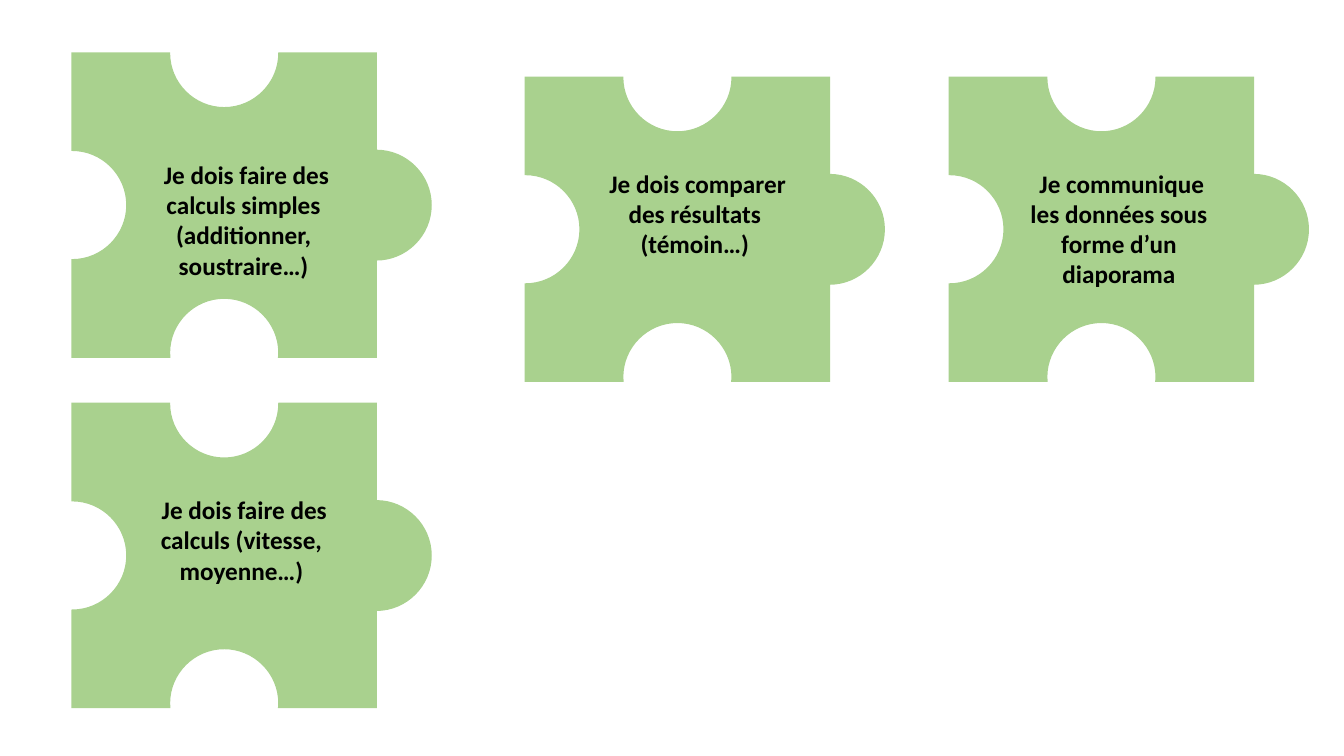
from math import cos, radians, sin

from lxml import etree
from pptx import Presentation
from pptx.dml.color import RGBColor
from pptx.enum.text import MSO_AUTO_SIZE, PP_ALIGN
from pptx.oxml.ns import qn
from pptx.util import Pt

CENTER = PP_ALIGN.CENTER
GROW = MSO_AUTO_SIZE.SHAPE_TO_FIT_TEXT
GREEN = RGBColor(0xA9, 0xD1, 0x8E)
BLACK = RGBColor(0, 0, 0)

PIECES = [
    {"at": (51.6, 37.9), "label": (97.3, 110.2, 94.5),
     "text": " Je dois faire des calculs simples (additionner, soustraire…)"},
    {"at": (375.3, 55.2), "label": (419.6, 116.6, 72.7),
     "text": " Je dois comparer des résultats (témoin…)"},
    {"at": (678.2, 55.2), "label": (722.6, 116.4, 94.5),
     "text": " Je communique les données sous forme d’un diaporama"},
    {"at": (51.6, 288.2), "label": (95.8, 349.6, 72.7),
     "text": " Je dois faire des calculs (vitesse, moyenne…)"},
]

SIDE = 217.2
MID = SIDE / 2
RADIUS = 39.1
BOTTOM_NOTCH = 214.2
LABEL_WIDTH = 153.4
BEZIER = 0.55


def half_circle(cx, cy, start, turn):
    def around(angle, pull=0):
        c, d = cos(radians(angle)), sin(radians(angle))
        return cx + RADIUS * (c - pull * d), cy + RADIUS * (d + pull * c)

    pull = BEZIER * turn / 90
    segments = [around(start)]
    for a in (start, start + turn):
        b = a + turn
        segments.append((*around(a, pull), *around(b, -pull), *around(b)))
    return segments


INNER_HALF = [(SIDE, MID - RADIUS), *half_circle(SIDE, MID, 90, 90)]
KNOB = half_circle(SIDE, MID, -90, 90)
BODY = [
    (0, 0), *half_circle(MID, 0, 180, -90),
    (SIDE, 0), *half_circle(SIDE, MID, 270, -90),
    (SIDE, SIDE), (MID + RADIUS - 0.2, SIDE),
    *half_circle(MID, BOTTOM_NOTCH, 0, -90),
    (MID - RADIUS + 0.2, SIDE), (0, SIDE), *half_circle(0, MID, 90, -90),
]


def add_outline(group, left, top, outline):
    segments = [[Pt((left, top)[i % 2] + v) for i, v in enumerate(segment)]
                for segment in outline]
    ends = [segment[-2:] for segment in segments]
    builder = group.shapes.build_freeform(*ends[0])
    builder.add_line_segments(ends[1:], close=True)
    sp = builder.convert_to_shape()
    lines = list(sp._element.iter(qn("a:lnTo")))
    for line, segment in zip(lines, segments[1:]):
        if len(segment) == 6:
            curve = etree.Element(qn("a:cubicBezTo"))
            for x, y in zip(segment[::2], segment[1::2]):
                etree.SubElement(curve, qn("a:pt"),
                                 x=str(x - sp.left), y=str(y - sp.top))
            line.getparent().replace(line, curve)
    sp.shadow.inherit = False
    sp.fill.solid()
    sp.fill.fore_color.rgb = GREEN
    sp.line.color.rgb = GREEN
    sp.line.width = Pt(1)
    ln = sp._element.spPr.find(qn("a:ln"))
    etree.SubElement(ln, qn("a:miter"), lim="800000")


def add_label(s, left, top, height, text):
    sp = s.shapes.add_textbox(Pt(left), Pt(top), Pt(LABEL_WIDTH), Pt(height))
    tf = sp.text_frame
    tf.word_wrap = True
    tf.auto_size = GROW
    tf.text = text
    p = tf.paragraphs[0]
    p.alignment = CENTER
    font = p.runs[0].font
    font.name = "Calibri"
    font.size = Pt(18)
    font.bold = True
    font.color.rgb = BLACK


prs = Presentation()
prs.slide_width = Pt(960)
prs.slide_height = Pt(540)
s = prs.slides.add_slide(prs.slide_layouts[6])

for piece in PIECES:
    group = s.shapes.add_group_shape()
    for outline in (INNER_HALF, BODY, KNOB):
        add_outline(group, *piece["at"], outline)
    add_label(s, *piece["label"], piece["text"])

prs.save("out.pptx")
